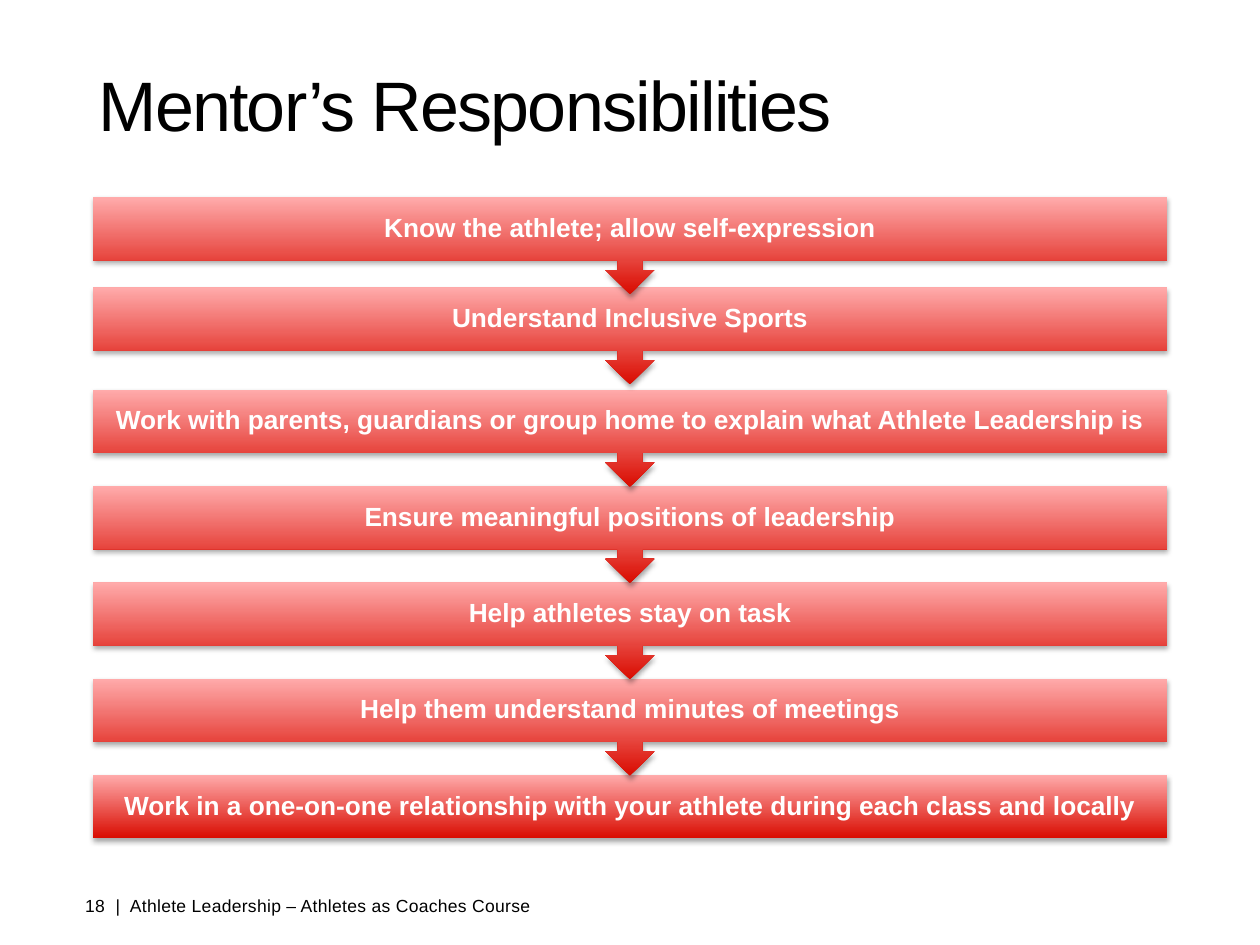
from lxml.etree import SubElement
from pptx import Presentation
from pptx.dml.color import RGBColor
from pptx.enum.shapes import MSO_SHAPE
from pptx.enum.text import MSO_ANCHOR, PP_ALIGN
from pptx.oxml.ns import qn
from pptx.util import Pt

COLORS = {"text": "000000", "label": "FFFFFF", "dark": "D90B00",
          "light": "FFABAB", "shadow": "000000"}


def add_run(para, text, size, color, bold=False, spacing=0):
    span = para.add_run()
    span.text = text
    span.font.name = "Arial"
    span.font.size = Pt(size)
    span.font.bold = bold
    span.font.color.rgb = RGBColor.from_string(COLORS[color])
    if spacing:
        span.font._element.set("spc", str(round(spacing * 100)))


def set_frame(frame, side, top, anchor, wrap=True):
    frame.margin_left = frame.margin_right = Pt(side)
    frame.margin_top = frame.margin_bottom = Pt(top)
    frame.vertical_anchor = anchor
    frame.word_wrap = wrap


deck = Presentation()
deck.slide_width, deck.slide_height = Pt(720), Pt(540)
page = deck.slides.add_slide(deck.slide_layouts[5])

# Title
title = page.shapes.title
title.left, title.top, title.width, title.height = Pt(53.3), Pt(20.2), Pt(535.7), Pt(90)
set_frame(title.text_frame, 3, 3, MSO_ANCHOR.MIDDLE)
para = title.text_frame.paragraphs[0]
para.alignment = PP_ALIGN.LEFT
para.line_spacing = Pt(36)
add_run(para, "Mentor’s Responsibilities", 40, "text", spacing=-1)

# Chain of responsibilities: the last four steps follow at an even pitch
BAR_HEIGHT, CALLOUT_HEIGHT, PITCH = 36.3, 55.5, 55
tops = [112.7, 164.2, 222.8] + [222.8 + PITCH * step for step in range(1, 5)]
labels = [
    "Know the athlete; allow self-expression",
    "Understand Inclusive Sports",
    "Work with parents, guardians or group home to explain what Athlete Leadership is",
    "Ensure meaningful positions of leadership",
    "Help athletes stay on task",
    "Help them understand minutes of meetings",
    "Work in a one-on-one relationship with your athlete during each class and locally",
]

# Drawn from the bottom up, so that each arrow lies over the next bar
for top, label in reversed(list(zip(tops, labels))):
    is_last = label == labels[-1]
    kind = MSO_SHAPE.RECTANGLE if is_last else MSO_SHAPE.DOWN_ARROW_CALLOUT
    height = BAR_HEIGHT if is_last else CALLOUT_HEIGHT
    box = page.shapes.add_shape(kind, Pt(53.2), Pt(top), Pt(613.6), Pt(height))
    box.line.fill.background()
    box.fill.gradient()
    box.fill.gradient_angle = 90
    for stop, color in zip(box.fill.gradient_stops, ("dark", "light")):
        stop.color.rgb = RGBColor.from_string(COLORS[color])

    # Soft shadow below the bar
    box.shadow.inherit = False
    effects = box._element.spPr.find(qn("a:effectLst"))
    shadow = SubElement(effects, qn("a:outerShdw"), blurRad=str(Pt(3.1)),
                        dist=str(Pt(1.8)), dir="5400000", rotWithShape="0")
    tint = SubElement(shadow, qn("a:srgbClr"), val=COLORS["shadow"])
    SubElement(tint, qn("a:alpha"), val="35000")

    set_frame(box.text_frame, 8.5, 8.5, MSO_ANCHOR.MIDDLE)
    para = box.text_frame.paragraphs[0]
    para.alignment = PP_ALIGN.CENTER
    para.line_spacing = 0.9
    para.space_after = Pt(5.25)
    add_run(para, label, 15, "label", bold=True)

# Footer
footer = page.shapes.add_textbox(Pt(43.7), Pt(508.3), Pt(291.6), Pt(14.4))
set_frame(footer.text_frame, 5, 3, MSO_ANCHOR.TOP, wrap=False)
add_run(footer.text_frame.paragraphs[0],
        "18  |  Athlete Leadership – Athletes as Coaches Course", 10, "text", spacing=0.2)

deck.save("out.pptx")
